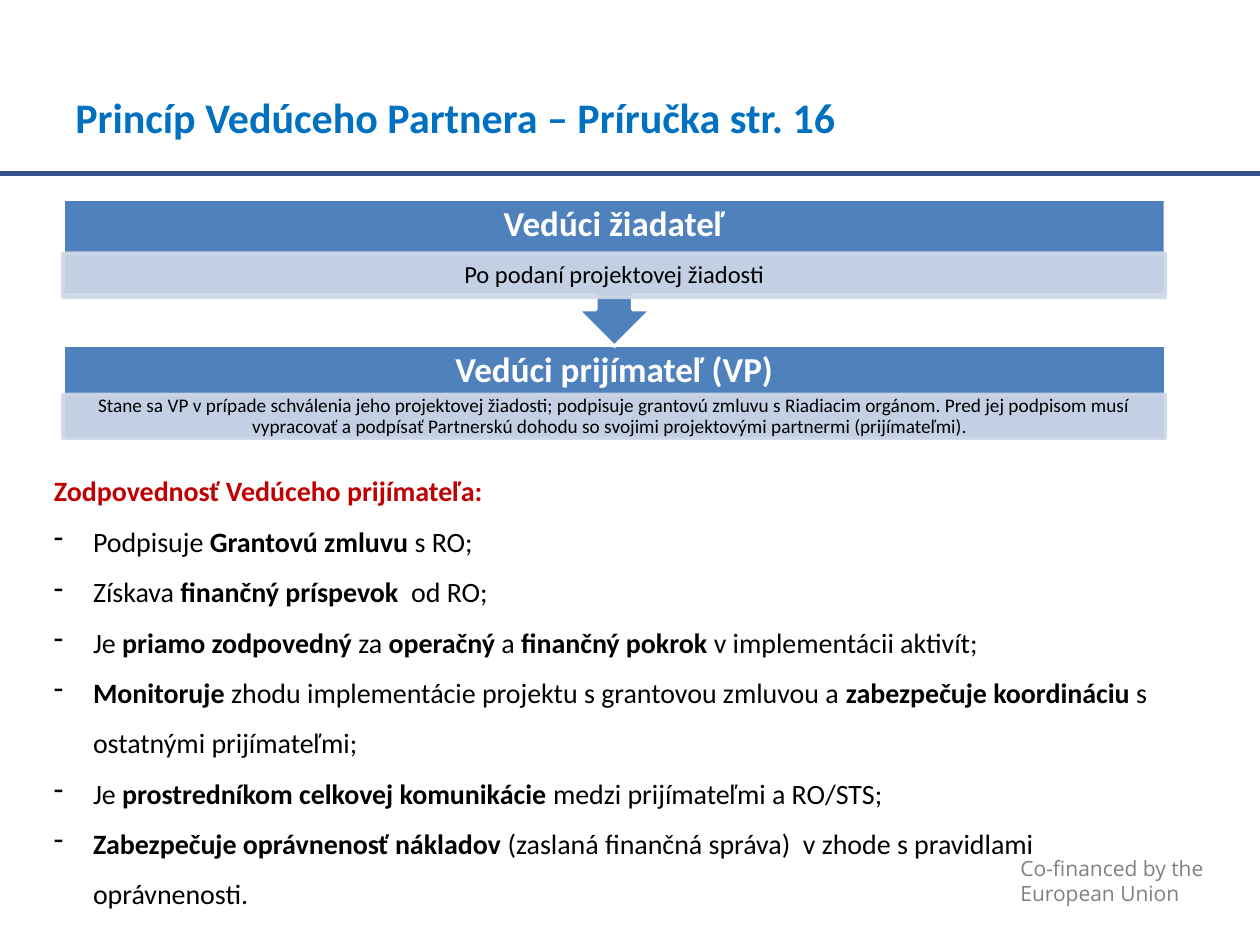
import pptx
import pptx.util
import pptx.dml.color
import pptx.enum.shapes
import pptx.enum.text
from dataclasses import dataclass
from lxml import etree
from pptx.oxml.ns import qn

Inches, Pt = pptx.util.Inches, pptx.util.Pt
SHAPE = pptx.enum.shapes.MSO_SHAPE
ALIGN = pptx.enum.text.PP_ALIGN
MIDDLE = pptx.enum.text.MSO_ANCHOR.MIDDLE


@dataclass(frozen=True)
class Theme:
    title: str = "0070C0"
    rule: str = "37518A"
    block: str = "4F81BD"
    strip: str = "D0D8E8"
    alert: str = "C00000"
    dark: str = "000000"
    light: str = "FFFFFF"
    muted: str = "808080"
    font: str = "Calibri"
    footer_font: str = "Open Sans"
    title_size: int = 24
    heading_size: int = 20
    body_size: int = 16
    strip_size: int = 14
    note_size: int = 11
    footer_size: int = 12


THEME = Theme()

# Text between ** marks is bold.
DUTIES = [
    "Podpisuje **Grantovú zmluvu **s RO;",
    "Získava **finančný príspevok  **od RO;",
    "Je **priamo zodpovedný **za **operačný **a **finančný pokrok **v implementácii aktivít;",
    "**Monitoruje **zhodu implementácie projektu s grantovou zmluvou a "
    "**zabezpečuje koordináciu** s ostatnými prijímateľmi;",
    "Je **prostredníkom celkovej komunikácie **medzi prijímateľmi a RO/STS;",
    "**Zabezpečuje oprávnenosť nákladov **(zaslaná finančná správa)  "
    "v zhode s pravidlami oprávnenosti.",
]


def rgb(value):
    return pptx.dml.color.RGBColor.from_string(value)


def apply(target, values):
    for name, value in values.items():
        setattr(target, name, value)


def write(paragraph, marked, size, color, font=THEME.font, **paragraph_format):
    """Fill a paragraph, switching bold on and off at each ** mark."""
    apply(paragraph, paragraph_format)
    for index, words in enumerate(marked.split("**")):
        if words:
            run = paragraph.add_run()
            run.text = words
            apply(run.font, {"name": font, "size": Pt(size), "bold": index % 2 == 1})
            run.font.color.rgb = rgb(color)


def set_frame(frame, inset_x=0.1, inset_y=0.05, **values):
    apply(frame, {
        "word_wrap": True,
        "margin_left": Inches(inset_x), "margin_right": Inches(inset_x),
        "margin_top": Inches(inset_y), "margin_bottom": Inches(inset_y),
        **values,
    })
    return frame


def add_text(slide, box, **frame_format):
    return set_frame(slide.shapes.add_textbox(*map(Inches, box)).text_frame, **frame_format)


def add_block(slide, kind, box, fill, line, alpha=None):
    block = slide.shapes.add_shape(kind, *map(Inches, box))
    block.shadow.inherit = False
    block.fill.solid()
    block.fill.fore_color.rgb = rgb(fill)
    block.line.color.rgb = rgb(line)
    block.line.width = Pt(2)
    if alpha:
        for color in block._element.spPr.iter(qn("a:srgbClr")):
            etree.SubElement(color, qn("a:alpha"), val=str(alpha * 1000))
    return block


def add_header(slide, box):
    left, top, width, height = box
    rule_y = Inches(top + 1.08)
    rule = slide.shapes.add_connector(
        pptx.enum.shapes.MSO_CONNECTOR.STRAIGHT, 0, rule_y, Inches(10), rule_y)
    rule.line.color.rgb = rgb(THEME.rule)
    rule.line.width = Pt(3)
    etree.SubElement(rule._element.spPr, qn("a:effectLst"))
    title = add_text(slide, box, vertical_anchor=MIDDLE)
    write(title.paragraphs[0], "**Princíp Vedúceho Partnera – Príručka str. 16**",
          THEME.title_size, THEME.title)


def add_stage(slide, box, kind, heading, detail, detail_size, strip_offset, rotation=0):
    """Block with a heading on top and a pale strip below it."""
    left, top, width, height = box
    block = add_block(slide, kind, box, THEME.block, THEME.light)
    block.rotation = rotation
    centred = {"alignment": ALIGN.CENTER, "line_spacing": 0.9}
    label = add_text(slide, (left, top, width, 0.41), inset_x=0.16, inset_y=0.16,
                     vertical_anchor=MIDDLE)
    write(label.paragraphs[0], f"**{heading}**", THEME.heading_size, THEME.light, **centred)
    strip = add_block(slide, SHAPE.RECTANGLE, (left, top + strip_offset, width, 0.35),
                      THEME.strip, THEME.strip, alpha=90)
    frame = set_frame(strip.text_frame, inset_y=0.02, vertical_anchor=MIDDLE)
    write(frame.paragraphs[0], detail, detail_size, THEME.dark, **centred)


def add_process(slide, box):
    left, top, width, height = box
    add_stage(slide, (left, top + 1.16, width, height - 1.16), SHAPE.RECTANGLE,
              "Vedúci prijímateľ (VP)",
              "Stane sa VP v prípade schválenia jeho projektovej žiadosti; podpisuje "
              "grantovú zmluvu s Riadiacim orgánom. Pred jej podpisom musí vypracovať a "
              "podpísať Partnerskú dohodu so svojimi projektovými partnermi (prijímateľmi).  ",
              THEME.note_size, strip_offset=0.39)
    add_stage(slide, (left, top, width, 1.17), SHAPE.UP_ARROW_CALLOUT,
              "Vedúci žiadateľ", "Po podaní projektovej žiadosti",
              THEME.strip_size, strip_offset=0.43, rotation=180)


def add_duties(slide, box):
    frame = add_text(slide, box)
    write(frame.paragraphs[0], "**Zodpovednosť Vedúceho prijímateľa:**",
          THEME.body_size, THEME.alert, line_spacing=1.5)
    indent = Inches(0.31)
    for duty in DUTIES:
        paragraph = frame.add_paragraph()
        properties = paragraph._p.get_or_add_pPr()
        properties.set("marL", str(indent))
        properties.set("indent", str(-indent))
        etree.SubElement(properties, qn("a:buChar"), char="-")
        write(paragraph, duty, THEME.body_size, THEME.dark, line_spacing=1.5)


def add_footer(slide, box):
    frame = add_text(slide, box)
    for paragraph, words in ((frame.paragraphs[0], "Co-financed by the"),
                             (frame.add_paragraph(), "European Union")):
        write(paragraph, words, THEME.footer_size, THEME.muted, THEME.footer_font)


def main():
    deck = pptx.Presentation()
    apply(deck, {"slide_width": Inches(10), "slide_height": Inches(7.5)})
    slide = deck.slides.add_slide(deck.slide_layouts[6])
    add_footer(slide, (8, 6.74, 1.72, 0.5))
    add_header(slide, (0.5, 0.3, 7.1, 1.25))
    add_process(slide, (0.5, 1.58, 8.75, 1.92))
    add_duties(slide, (0.33, 3.58, 9.08, 3.74))
    deck.save("out.pptx")


if __name__ == "__main__":
    main()
